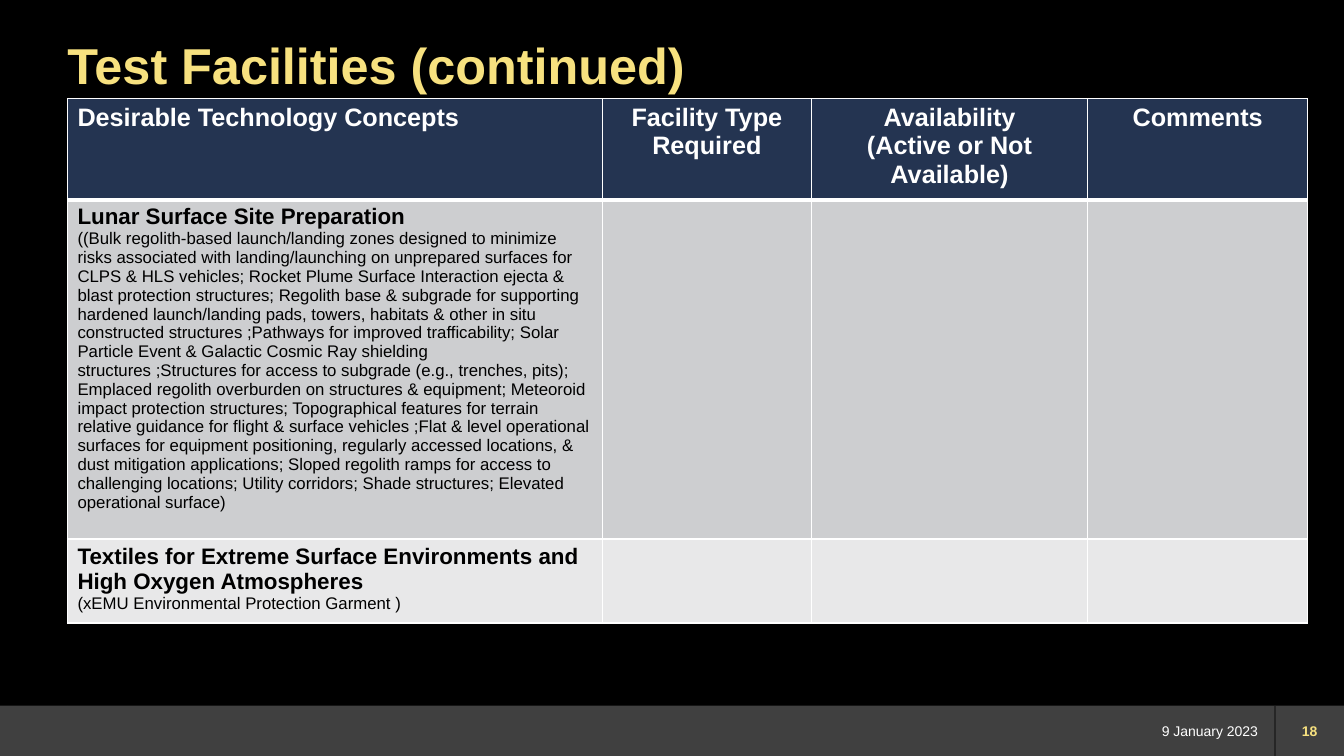
from dataclasses import dataclass

from lxml.etree import SubElement
from pptx import Presentation
from pptx.dml.color import RGBColor
from pptx.enum.shapes import MSO_CONNECTOR, MSO_SHAPE
from pptx.enum.text import MSO_ANCHOR, PP_ALIGN
from pptx.oxml.ns import qn
from pptx.util import Cm, Pt


@dataclass(frozen=True)
class Theme:
    """Hold the colours, font and type sizes of the slide."""
    font: str = "Arial"
    background: str = "000000"
    bar: str = "404040"
    divider: str = "262626"
    accent: str = "F7E17F"
    light: str = "FFFFFF"
    dark: str = "000000"
    header: str = "243451"
    bands: tuple = ("CDCED0", "E8E8E9")
    title_size: int = 36
    header_size: int = 18
    topic_size: int = 16
    detail_size: int = 12
    footer_size: int = 10


THEME = Theme()
SLIDE_WIDTH, SLIDE_HEIGHT = 33.87, 19.05
BAR_TOP, BAR_HEIGHT = 17.78, 1.27
LEFT_MARGIN = 1.7
COLUMN_WIDTHS = (13.48, 5.27, 6.96, 5.55)
ROW_HEIGHTS = (2.39, 7.99, 1.98)
HEADERS = (
    ("Desirable Technology Concepts",),
    ("Facility Type Required",),
    ("Availability", "(Active or Not Available)"),
    ("Comments",),
)
CONCEPTS = (
    ("Lunar Surface Site Preparation", (
        "((Bulk regolith-based launch/landing zones designed to minimize risks associated with",
        "landing/launching on unprepared surfaces for CLPS & HLS vehicles; Rocket Plume Surface",
        "Interaction ejecta & blast protection structures; Regolith base & subgrade for supporting",
        "hardened launch/landing pads, towers, habitats & other in situ constructed structures",
        ";Pathways for improved trafficability; Solar Particle Event & Galactic Cosmic Ray shielding",
        "structures ;Structures for access to subgrade (e.g., trenches, pits); Emplaced regolith",
        "overburden on structures & equipment; Meteoroid impact protection structures; Topographical",
        "features for terrain relative guidance for flight & surface vehicles ;Flat & level",
        "operational surfaces for equipment positioning, regularly accessed locations, & dust",
        "mitigation applications; Sloped regolith ramps for access to challenging locations; Utility",
        "corridors; Shade structures; Elevated operational surface)",
    )),
    ("Textiles for Extreme Surface Environments and High Oxygen Atmospheres",
     ("(xEMU Environmental Protection Garment )",)),
)


def apply_format(target, values):
    """Set every attribute named in a dict of format values."""
    for name, value in values.items():
        setattr(target, name, value)


def fill_solid(owner, color):
    """Give a shape, cell or background a solid fill."""
    owner.fill.solid()
    owner.fill.fore_color.rgb = RGBColor.from_string(color)


def write_paragraph(paragraph, text, size, color, bold=False, **layout):
    """Write one formatted run into a paragraph."""
    apply_format(paragraph, layout)
    run = paragraph.add_run()
    run.text = text
    apply_format(run.font, {"name": THEME.font, "size": Pt(size), "bold": bold})
    run.font.color.rgb = RGBColor.from_string(color)


def set_frame(frame, anchor, side_margin=0):
    """Set wrapping, anchoring and margins of a text frame."""
    apply_format(frame, {
        "word_wrap": True, "vertical_anchor": anchor,
        "margin_left": Cm(side_margin), "margin_right": Cm(side_margin),
        "margin_top": 0, "margin_bottom": 0,
    })


def add_title(slide, text):
    """Place and fill the title placeholder."""
    title = slide.shapes.title
    apply_format(title, {"left": Cm(LEFT_MARGIN), "top": Cm(1.02),
                         "width": Cm(30.48), "height": Cm(2.11)})
    set_frame(title.text_frame, MSO_ANCHOR.TOP)
    write_paragraph(title.text_frame.paragraphs[0], text, THEME.title_size, THEME.accent,
                    bold=True, alignment=PP_ALIGN.LEFT, line_spacing=0.9)


def add_footer_bar(slide):
    """Draw the band along the bottom edge."""
    bar = slide.shapes.add_shape(MSO_SHAPE.RECTANGLE, 0, Cm(BAR_TOP),
                                 Cm(SLIDE_WIDTH), Cm(BAR_HEIGHT))
    bar.shadow.inherit = False
    fill_solid(bar, THEME.bar)
    bar.line.fill.background()


def add_divider(slide, left, color):
    """Draw a vertical line across the footer bar."""
    divider = slide.shapes.add_connector(MSO_CONNECTOR.STRAIGHT, Cm(left), Cm(BAR_TOP),
                                         Cm(left), Cm(BAR_TOP + BAR_HEIGHT))
    divider.line.width = Pt(1)
    divider.line.color.rgb = RGBColor.from_string(color)
    SubElement(divider.element.spPr, qn("a:effectLst"))


def add_footer_text(slide, left, width, text, color, alignment, bold=False, side_margin=0):
    """Add a text box that fills the height of the footer bar."""
    box = slide.shapes.add_textbox(Cm(left), Cm(BAR_TOP), Cm(width), Cm(BAR_HEIGHT))
    set_frame(box.text_frame, MSO_ANCHOR.MIDDLE, side_margin)
    write_paragraph(box.text_frame.paragraphs[0], text, THEME.footer_size, color,
                    bold=bold, alignment=alignment)


def style_cell(cell, color, top_width, bottom_width):
    """Give a cell its borders and fill."""
    properties = cell._tc.get_or_add_tcPr()
    for side, width in (("L", 1), ("R", 1), ("T", top_width), ("B", bottom_width)):
        line = SubElement(properties, qn(f"a:ln{side}"), w=str(int(Pt(width))))
        SubElement(SubElement(line, qn("a:solidFill")), qn("a:srgbClr"), val=THEME.light)
    fill_solid(cell, color)


def add_facilities_table(slide):
    """Build the table of technology concepts and facilities."""
    table = slide.shapes.add_table(
        len(ROW_HEIGHTS), len(COLUMN_WIDTHS), Cm(LEFT_MARGIN), Cm(2.49),
        Cm(sum(COLUMN_WIDTHS)), Cm(sum(ROW_HEIGHTS))).table
    for column, width in zip(table.columns, COLUMN_WIDTHS):
        column.width = Cm(width)
    for row, height in zip(table.rows, ROW_HEIGHTS):
        row.height = Cm(height)
    for row_index, color in enumerate((THEME.header, *THEME.bands)):
        for cell in table.rows[row_index].cells:
            style_cell(cell, color, 3 if row_index == 1 else 1, 3 if row_index == 0 else 1)
    for column_index, lines in enumerate(HEADERS):
        frame = table.cell(0, column_index).text_frame
        alignment = PP_ALIGN.CENTER if column_index else PP_ALIGN.LEFT
        for line_index, text in enumerate(lines):
            paragraph = frame.add_paragraph() if line_index else frame.paragraphs[0]
            write_paragraph(paragraph, text, THEME.header_size, THEME.light,
                            bold=True, alignment=alignment)
    for row_index, (topic, details) in enumerate(CONCEPTS, start=1):
        frame = table.cell(row_index, 0).text_frame
        write_paragraph(frame.paragraphs[0], topic, THEME.topic_size, THEME.dark, bold=True)
        write_paragraph(frame.add_paragraph(), " ".join(details), THEME.detail_size, THEME.dark)


def main():
    """Build and save the slide."""
    presentation = Presentation()
    apply_format(presentation, {"slide_width": Cm(SLIDE_WIDTH), "slide_height": Cm(SLIDE_HEIGHT)})
    slide = presentation.slides.add_slide(presentation.slide_layouts[5])
    fill_solid(slide.background, THEME.background)
    add_footer_bar(slide)
    add_divider(slide, LEFT_MARGIN, THEME.bar)
    add_divider(slide, 32.13, THEME.divider)
    add_title(slide, "Test Facilities (continued)")
    add_footer_text(slide, 28.14, 3.81, "9 January 2023", THEME.light, PP_ALIGN.RIGHT,
                    side_margin=0.25)
    add_footer_text(slide, 32.33, 1.35, "18", THEME.accent, PP_ALIGN.CENTER, bold=True)
    add_facilities_table(slide)
    presentation.save("out.pptx")


if __name__ == "__main__":
    main()
